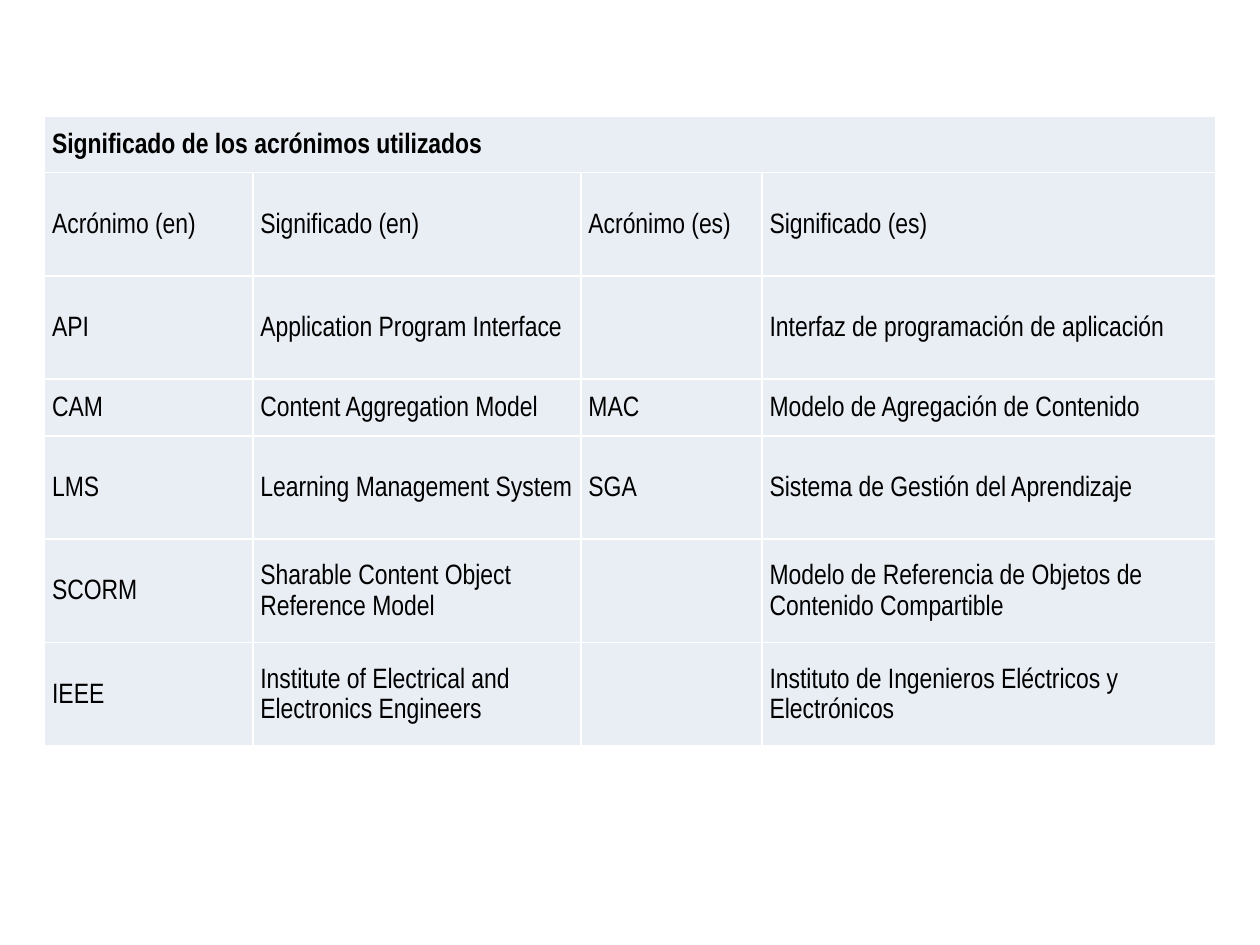
import pptx
import pptx.dml.color
import pptx.enum.text
import pptx.oxml
import pptx.oxml.ns
import pptx.util

Pt = pptx.util.Pt
BLACK = pptx.dml.color.RGBColor(0x00, 0x00, 0x00)
WHITE = pptx.dml.color.RGBColor(0xFF, 0xFF, 0xFF)
PALE_BLUE = pptx.dml.color.RGBColor(0xE9, 0xED, 0xF4)

TITLE = "Significado de los acrónimos utilizados"
ACRONYMS = [
    ("Acrónimo (en)", "Significado (en)", "Acrónimo (es)", "Significado (es)"),
    ("API", "Application Program Interface", "", "Interfaz de programación de aplicación"),
    ("CAM", "Content Aggregation Model", "MAC", "Modelo de Agregación de Contenido"),
    ("LMS", "Learning Management System", "SGA", "Sistema de Gestión del Aprendizaje"),
    ("SCORM", "Sharable Content Object Reference Model", "",
     "Modelo de Referencia de Objetos de Contenido Compartible"),
    ("IEEE", "Institute of Electrical and Electronics Engineers", "",
     "Instituto de Ingenieros Eléctricos y Electrónicos"),
]
COLUMN_WIDTHS = [119, 187.5, 103.5, 259]
LOW, TALL = 32.4, 59
ROW_HEIGHTS = [LOW, TALL, TALL, LOW, TALL, TALL, TALL]


def set_borders(cell, color, width):
    properties = cell._tc.get_or_add_tcPr()
    namespace = pptx.oxml.ns.nsdecls("a")
    for position, side in enumerate(("lnL", "lnR", "lnT", "lnB")):
        border = pptx.oxml.parse_xml(
            f'<a:{side} {namespace} w="{Pt(width)}"><a:solidFill>'
            f'<a:srgbClr val="{color}"/></a:solidFill></a:{side}>'
        )
        properties.insert(position, border)


def style_cell(cell):
    cell.fill.solid()
    cell.fill.fore_color.rgb = PALE_BLUE
    cell.vertical_anchor = pptx.enum.text.MSO_ANCHOR.MIDDLE
    cell.margin_left = cell.margin_right = Pt(4.3)
    cell.margin_top = cell.margin_bottom = Pt(2.2)
    set_borders(cell, WHITE, 1)


def write_cell(cell, text, bold=False):
    cell.text = text
    para = cell.text_frame.paragraphs[0]
    para.line_spacing = 1.15
    para.font.name = "Arial Narrow"
    para.font.size = Pt(16)
    para.font.bold = bold
    para.font.color.rgb = BLACK


def add_acronym_table(page):
    frame = page.shapes.add_table(
        len(ROW_HEIGHTS), len(COLUMN_WIDTHS), Pt(25.5), Pt(66.3),
        Pt(sum(COLUMN_WIDTHS)), Pt(sum(ROW_HEIGHTS)),
    )
    table = frame.table
    table.first_row = False
    table.horz_banding = False
    for column, width in zip(table.columns, COLUMN_WIDTHS):
        column.width = Pt(width)
    for row, height in zip(table.rows, ROW_HEIGHTS):
        row.height = Pt(height)
    for cell in table.iter_cells():
        style_cell(cell)
    table.cell(0, 0).merge(table.cell(0, len(COLUMN_WIDTHS) - 1))
    write_cell(table.cell(0, 0), TITLE, bold=True)
    for row_index, entry in enumerate(ACRONYMS, start=1):
        for column_index, text in enumerate(entry):
            write_cell(table.cell(row_index, column_index), text)


def main():
    deck = pptx.Presentation()
    deck.slide_width = Pt(720)
    deck.slide_height = Pt(540)
    page = deck.slides.add_slide(deck.slide_layouts[6])
    add_acronym_table(page)
    deck.save("out.pptx")


if __name__ == "__main__":
    main()
